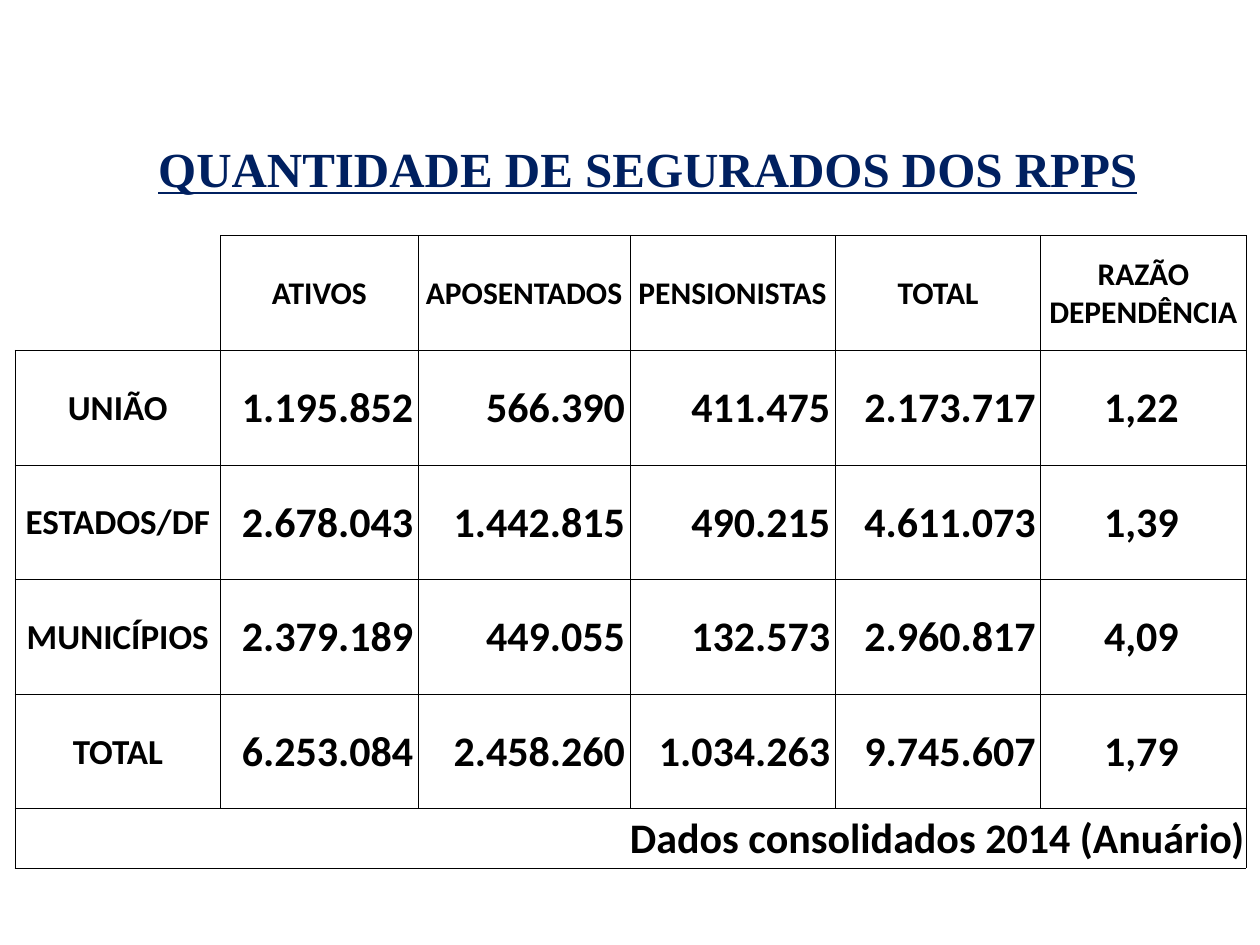
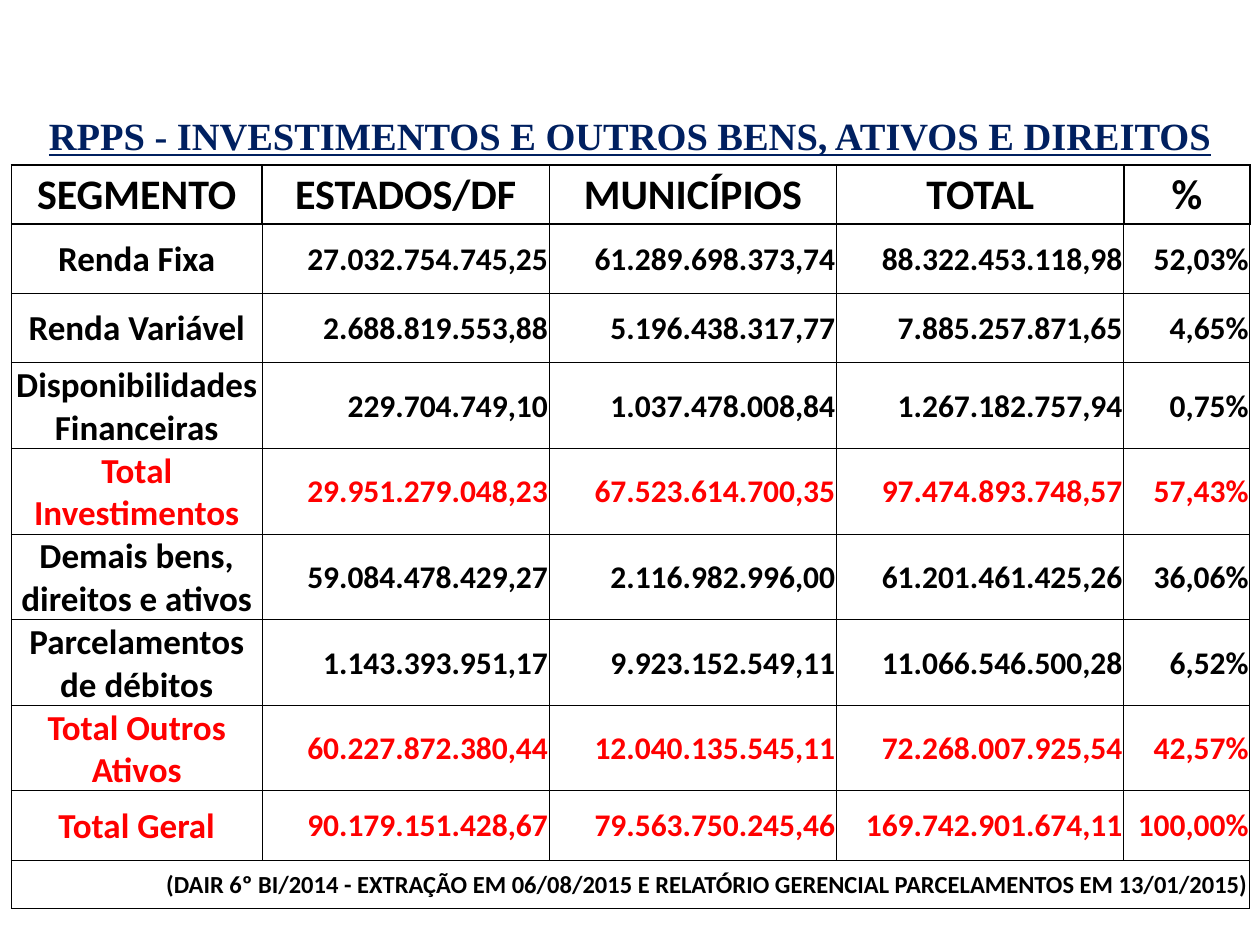
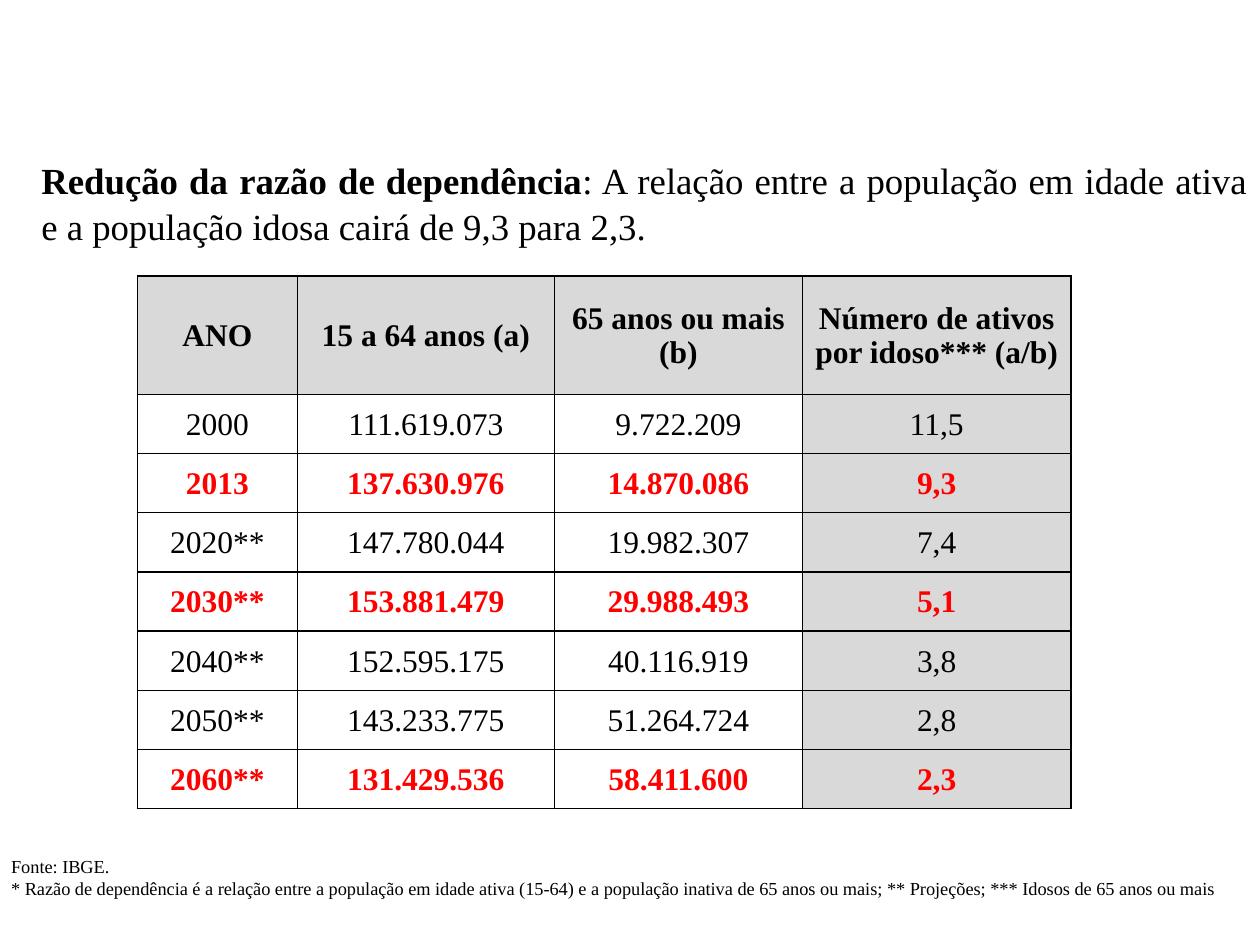
from lxml import etree
from pptx import Presentation
from pptx.dml.color import RGBColor
from pptx.enum.text import MSO_ANCHOR, PP_ALIGN
from pptx.oxml.ns import qn
from pptx.util import Inches, Pt

NAVY = RGBColor(0x00, 0x20, 0x60)
BLACK = RGBColor(0, 0, 0)
RED = RGBColor(0xFF, 0, 0)
WHITE = RGBColor(0xFF, 0xFF, 0xFF)
GREY = RGBColor(0xD9, 0xD9, 0xD9)
LEFT, RIGHT, CENTER, JUST = PP_ALIGN.LEFT, PP_ALIGN.RIGHT, PP_ALIGN.CENTER, PP_ALIGN.JUSTIFY
MIDDLE = MSO_ANCHOR.MIDDLE
SANS, SERIF = "Calibri", "Times New Roman"


def write(para, text, size=18, font=SANS, color=BLACK, bold=True, line=False, align=None):
    run = para.add_run()
    run.text = text
    style = run.font
    style.size, style.name, style.bold = Pt(size), font, bold
    style.underline = line
    style.color.rgb = color
    if align is not None:
        para.alignment = align


def border(cell, widths):
    """Set left, right, top and bottom line widths in points; 0 hides a line."""
    props = cell._tc.get_or_add_tcPr()
    for index, (side, width) in enumerate(zip("LRTB", widths)):
        edge = etree.Element(qn(f"a:ln{side}"), w=str(Pt(width)))
        if width:
            fill = etree.SubElement(edge, qn("a:solidFill"))
            etree.SubElement(fill, qn("a:srgbClr"), val=str(BLACK))
        else:
            etree.SubElement(edge, qn("a:noFill"))
        props.insert(index, edge)


class Deck:
    def __init__(self):
        self.show = Presentation()
        self.show.slide_width, self.show.slide_height = Inches(10), Inches(7.5)
        self.slide = None

    def page(self):
        self.slide = self.show.slides.add_slide(self.show.slide_layouts[6])

    def box(self, x, y, wide, high):
        frame = self.slide.shapes.add_textbox(
            Inches(x), Inches(y), Inches(wide), Inches(high)).text_frame
        frame.word_wrap = True
        return frame

    def title(self, text, size, *place):
        write(self.box(*place).paragraphs[0], text, size, SERIF, NAVY, line=True, align=CENTER)

    def table(self, x, y, cols, rows):
        grid = self.slide.shapes.add_table(
            len(rows), len(cols), Inches(x), Inches(y),
            Inches(sum(cols)), Inches(sum(rows))).table
        grid.first_row = grid.horz_banding = False
        for col, wide in zip(grid.columns, cols):
            col.width = Inches(wide)
        for row, high in zip(grid.rows, rows):
            row.height = Inches(high)
        return grid

    def cell(self, cell, text, fill=WHITE, pad=0.01, edges=(0.5,) * 4, **style):
        cell.vertical_anchor = MIDDLE
        cell.margin_left = cell.margin_top = Inches(0.01)
        cell.margin_right, cell.margin_bottom = Inches(pad), 0
        if fill is None:
            cell.fill.background()
        else:
            cell.fill.solid()
            cell.fill.fore_color.rgb = fill
        border(cell, edges)
        if text:
            write(cell.text_frame.paragraphs[0], text, **style)

    def source(self, grid, text, size):
        """Fill the last row as one merged, right-aligned cell."""
        last = len(grid.rows) - 1
        cells = list(grid.rows[last].cells)
        cells[0].merge(cells[-1])
        for col, cell in enumerate(cells):
            self.cell(cell, "" if col else text, size=size, align=RIGHT)


MEMBERS = [
    ["", "ATIVOS", "APOSENTADOS", "PENSIONISTAS", "TOTAL", "RAZÃO DEPENDÊNCIA"],
    ["UNIÃO", "1.195.852", "566.390", "411.475", "2.173.717", "1,22"],
    ["ESTADOS/DF", "2.678.043", "1.442.815", "490.215", "4.611.073", "1,39"],
    ["MUNICÍPIOS", "2.379.189", "449.055", "132.573", "2.960.817", "4,09"],
    ["TOTAL", "6.253.084", "2.458.260", "1.034.263", "9.745.607", "1,79"],
]
ASSETS = [
    ["SEGMENTO", "ESTADOS/DF", "MUNICÍPIOS", "TOTAL", "%"],
    ["Renda Fixa", "27.032.754.745,25", "61.289.698.373,74", "88.322.453.118,98", "52,03%"],
    ["Renda Variável", "2.688.819.553,88", "5.196.438.317,77", "7.885.257.871,65", "4,65%"],
    ["Disponibilidades Financeiras", "229.704.749,10", "1.037.478.008,84",
     "1.267.182.757,94", "0,75%"],
    ["Total Investimentos", "29.951.279.048,23", "67.523.614.700,35",
     "97.474.893.748,57", "57,43%"],
    ["Demais bens, direitos e ativos", "59.084.478.429,27", "2.116.982.996,00",
     "61.201.461.425,26", "36,06%"],
    ["Parcelamentos de débitos", "1.143.393.951,17", "9.923.152.549,11",
     "11.066.546.500,28", "6,52%"],
    ["Total Outros Ativos", "60.227.872.380,44", "12.040.135.545,11",
     "72.268.007.925,54", "42,57%"],
    ["Total Geral", "90.179.151.428,67", "79.563.750.245,46", "169.742.901.674,11", "100,00%"],
]
AGES = [
    ["ANO", "15 a 64 anos (a)", "65 anos ou mais (b)", "Número de ativos por idoso*** (a/b)"],
    ["2000", "111.619.073", "9.722.209", "11,5"],
    ["2013", "137.630.976", "14.870.086", "9,3"],
    ["2020**", "147.780.044", "19.982.307", "7,4"],
    ["2030**", "153.881.479", "29.988.493", "5,1"],
    ["2040**", "152.595.175", "40.116.919", "3,8"],
    ["2050**", "143.233.775", "51.264.724", "2,8"],
    ["2060**", "131.429.536", "58.411.600", "2,3"],
]
KEY_YEARS = {"2013", "2030**", "2060**"}
NOTES = [
    "Fonte: IBGE.",
    "* Razão de dependência é a relação entre a população em idade ativa (15-64) e a "
    "população inativa de 65 anos ou mais; ** Projeções; *** Idosos de 65 anos ou mais",
]


def members(deck):
    deck.page()
    deck.title("QUANTIDADE DE SEGURADOS DOS RPPS", 28, 0.87, 1.05, 8.54, 0.81)
    grid = deck.table(0.12, 1.87, [1.63, 1.57, 1.68, 1.63, 1.63, 1.63], [0.91] * 5 + [0.47])
    for r, row in enumerate(MEMBERS):
        for c, text in enumerate(row):
            number = r > 0 and c > 0
            corner = r == c == 0
            deck.cell(
                grid.cell(r, c), text,
                fill=None if corner else WHITE,
                pad=0.04 if number else 0.01,
                edges=(0, 0.5, 0, 0.5) if corner else (0.5,) * 4,
                size=24 if number else 20 if r else 18,
                align=RIGHT if number and c < 5 else CENTER)
    deck.source(grid, "Dados consolidados 2014 (Anuário)", 24)


def assets(deck):
    deck.page()
    deck.title("RPPS - INVESTIMENTOS E OUTROS BENS, ATIVOS E DIREITOS", 22, 0, 0.84, 10, 0.71)
    grid = deck.table(0.09, 1.31, [1.99, 2.28, 2.28, 2.28, 1],
                      [0.47] + [0.55] * 2 + [0.68] * 4 + [0.55] * 2 + [0.38])
    for r, row in enumerate(ASSETS):
        side = 0.5 if r else 1
        top = 0.5 if r > 1 else 1
        for c, text in enumerate(row):
            deck.cell(
                grid.cell(r, c), text,
                edges=(side, side, top, side),
                size=24 if r == 0 else 18 if c else 20,
                color=RED if row[0].startswith("Total") else BLACK,
                align=RIGHT if r and c else CENTER)
    deck.source(grid, "(DAIR 6º BI/2014 - EXTRAÇÃO EM 06/08/2015 E RELATÓRIO GERENCIAL "
                      "PARCELAMENTOS EM 13/01/2015)", 14)


def ages(deck):
    deck.page()
    notes = deck.box(-0.01, 6.74, 10, 0.45)
    for index, text in enumerate(NOTES):
        para = notes.add_paragraph() if index else notes.paragraphs[0]
        props = para._p.get_or_add_pPr()
        props.set("marL", str(Inches(0.31)))
        props.set("indent", str(Inches(-0.31)))
        write(para, text, 10.5, SERIF, bold=False, align=JUST)

    grid = deck.table(1.09, 2.19, [1.27, 2.04, 1.97, 2.13], [0.94] + [0.47] * 7)
    for r, row in enumerate(AGES):
        key = row[0] in KEY_YEARS
        for c, text in enumerate(row):
            deck.cell(
                grid.cell(r, c), text,
                fill=GREY if r == 0 or c == 3 else None,
                edges=(1,) * 4,
                font=SERIF, bold=r == 0 or key,
                color=RED if key else BLACK, align=CENTER)

    intro = deck.box(0.23, 1.19, 9.77, 0.81).paragraphs[0]
    intro.line_spacing = 1.04
    write(intro, "Redução da razão de dependência", 21, SERIF, align=JUST)
    write(intro, ": A relação entre a população em idade ativa e a população idosa "
                 "cairá de 9,3 para 2,3.", 21, SERIF, bold=False)


def main():
    deck = Deck()
    for build in (members, assets, ages):
        build(deck)
    deck.show.save("out.pptx")


if __name__ == "__main__":
    main()
